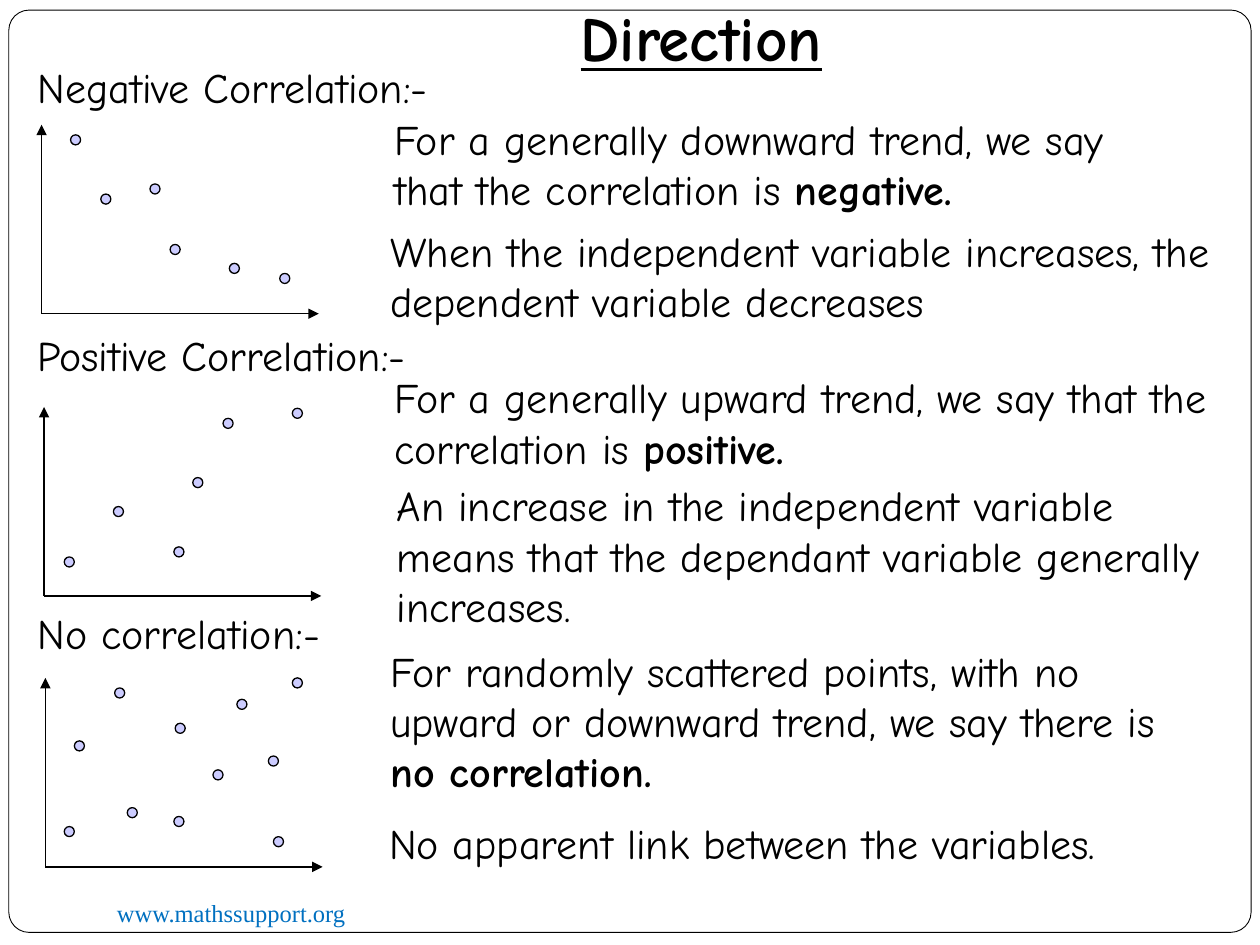
from lxml.etree import SubElement
from pptx import Presentation
from pptx.dml.color import RGBColor
from pptx.enum.shapes import MSO_CONNECTOR, MSO_SHAPE
from pptx.enum.text import MSO_AUTO_SIZE
from pptx.oxml.ns import qn
from pptx.util import Inches, Pt

BODY = {"name": "Comic Neue", "size": Pt(24)}
TITLE = {"name": "Comic Neue", "size": Pt(36), "bold": True, "underline": True}
FOOTER = {"name": "Times New Roman", "size": Pt(14)}
BLACK, WHITE, LAVENDER, BLUE = "000000", "FFFFFF", "CCCCFF", "0070C0"
DOT = 0.08
AXIS_WIDTH, AXIS_HEIGHT = 2.2, 1.5

SECTIONS = [
    {
        "heading": ("Negative Correlation:-", (0.2, 0.44, 4.13, 0.5)),
        "origin": (0.33, 2.49),
        "dots": [(0.56, 1.07), (0.8, 1.54), (1.19, 1.46),
                 (1.35, 1.94), (1.82, 2.09), (2.22, 2.17)],
        "trend": ("For a generally downward trend, we say that the correlation is ",
                  "negative.", (3.03, 0.85, 6.46, 0.91)),
        "meaning": ("When the independent variable increases, the dependent "
                    "variable decreases", (3, 1.74, 6.8, 0.91)),
    },
    {
        "heading": ("Positive Correlation:-", (0.2, 2.57, 8.19, 0.5)),
        "origin": (0.35, 4.73),
        "dots": [(0.51, 4.42), (0.9, 4.02), (1.38, 4.34),
                 (1.53, 3.79), (1.77, 3.32), (2.32, 3.24)],
        "trend": ("For a generally upward trend, we say that the correlation is ",
                  "positive.", (3.03, 2.9, 6.89, 0.91)),
        "meaning": ("An increase in the independent variable means that the "
                    "dependant variable generally increases.",
                    (3.05, 3.76, 6.7, 1.31)),
    },
    {
        "heading": ("No correlation:-", (0.2, 4.77, 2.76, 0.5)),
        "origin": (0.36, 6.88),
        "dots": [(0.51, 6.56), (0.59, 5.88), (0.91, 5.46), (1.01, 6.41),
                 (1.38, 6.48), (1.39, 5.74), (1.69, 6.11), (1.88, 5.55),
                 (2.13, 6), (2.17, 6.64), (2.32, 5.38)],
        "trend": ("For randomly scattered points, with no upward or downward "
                  "trend, we say there is ", "no correlation.",
                  (3, 5.07, 6.7, 1.31)),
        "meaning": ("No apparent link between the variables.",
                    (2.99, 6.44, 6.73, 0.5)),
    },
]


def color(value):
    return RGBColor.from_string(value)


def add_text(page, place, spans, style, ink=BLACK, wrap=True):
    box = page.shapes.add_textbox(*map(Inches, place))
    frame = box.text_frame
    frame.word_wrap = wrap
    frame.auto_size = MSO_AUTO_SIZE.SHAPE_TO_FIT_TEXT
    para = frame.paragraphs[0]
    for words, changes in spans:
        span = para.add_run()
        span.text = words
        for key, value in {**style, **changes}.items():
            setattr(span.font, key, value)
        span.font.color.rgb = color(ink)


def add_shape(page, kind, place, fill, width):
    shape = page.shapes.add_shape(kind, *map(Inches, place))
    shape.shadow.inherit = False
    shape.fill.solid()
    shape.fill.fore_color.rgb = color(fill)
    shape.line.color.rgb = color(BLACK)
    shape.line.width = Pt(width)
    return shape


def add_arrow(page, start, end):
    arrow = page.shapes.add_connector(
        MSO_CONNECTOR.STRAIGHT, *map(Inches, (*start, *end)))
    arrow.line.color.rgb = color(BLACK)
    arrow.line.width = Pt(0.75)
    SubElement(arrow.line._get_or_add_ln(), qn("a:tailEnd"), type="triangle")
    SubElement(arrow._element.spPr, qn("a:effectLst"))


def add_section(page, section):
    words, place = section["heading"]
    add_text(page, place, [(words, {})], BODY)
    x, y = section["origin"]
    for end in ((x, y - AXIS_HEIGHT), (x + AXIS_WIDTH, y)):
        add_arrow(page, (x, y), end)
    for left, top in section["dots"]:
        add_shape(page, MSO_SHAPE.OVAL, (left, top, DOT, DOT), LAVENDER, 0.75)
    words, key_word, place = section["trend"]
    add_text(page, place, [(words, {}), (key_word, {"bold": True})], BODY)
    words, place = section["meaning"]
    add_text(page, place, [(words, {})], BODY)


def main():
    deck = Presentation()
    deck.slide_width, deck.slide_height = Inches(10), Inches(7.5)
    page = deck.slides.add_slide(deck.slide_layouts[6])
    border = add_shape(page, MSO_SHAPE.ROUNDED_RECTANGLE,
                       (0.07, 0.08, 9.86, 7.32), WHITE, 0.5)
    border.adjustments[0] = 0.022
    add_text(page, (0.83, 7.08, 3.25, 0.34),
             [("www.mathssupport.org", {})], FOOTER, BLUE)
    add_text(page, (4.51, -0.06, 2.4, 0.71), [("Direction", {})], TITLE, wrap=False)
    for section in SECTIONS:
        add_section(page, section)
    deck.save("out.pptx")


if __name__ == "__main__":
    main()
